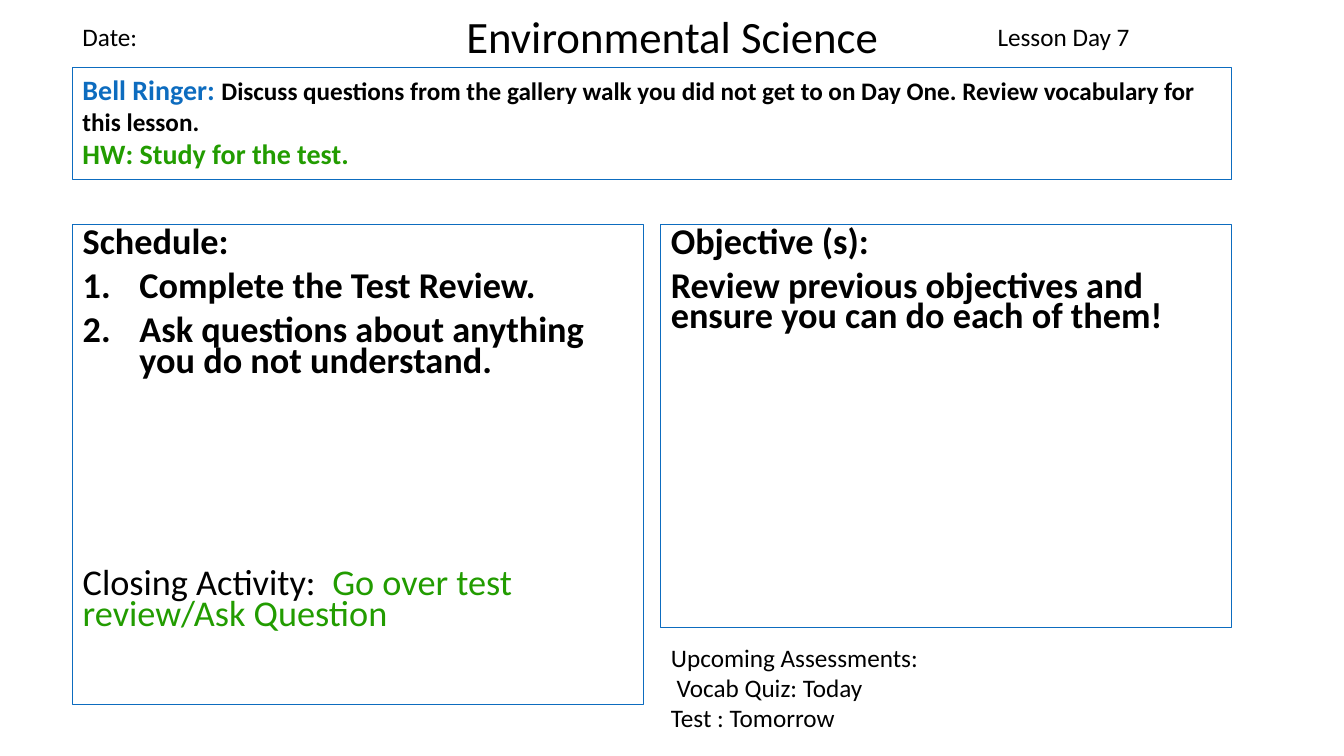
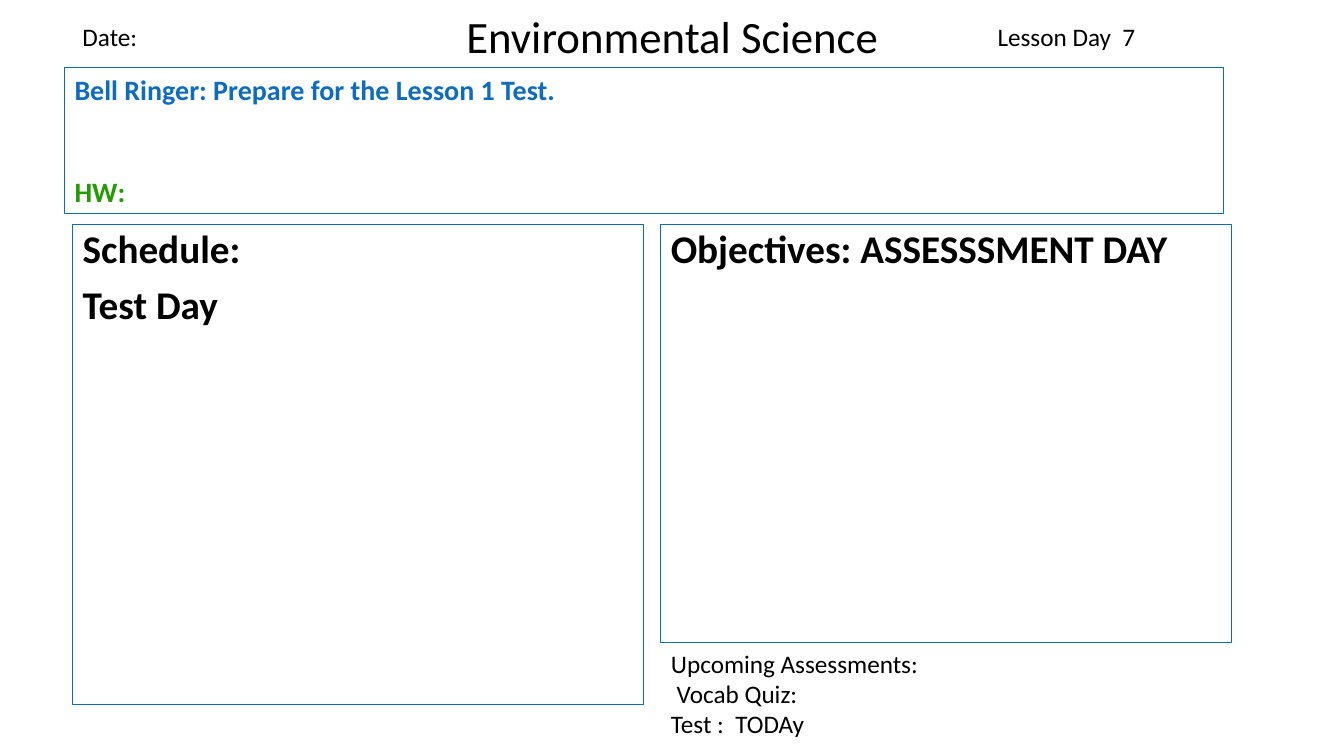
from dataclasses import dataclass, field

from lxml.etree import SubElement
from pptx import Presentation
from pptx.dml.color import RGBColor
from pptx.enum.text import MSO_ANCHOR as Anchor, MSO_AUTO_SIZE as AutoSize, PP_ALIGN as Align
from pptx.oxml.ns import qn
from pptx.util import Cm, Pt


@dataclass(frozen=True)
class Theme:
    font: str = "Calibri"
    ink: RGBColor = RGBColor(0x00, 0x00, 0x00)
    blue: RGBColor = RGBColor(0x0D, 0x6C, 0xBF)
    green: RGBColor = RGBColor(0x22, 0x9C, 0x00)
    title: float = 32
    panel: float = 28
    dense_panel: float = 25.9
    bell: float = 20
    note: float = 18
    border: float = 0.75
    number_indent: float = 1.43
    column_gap: float = 0.43


THEME = Theme()


@dataclass
class Box:
    left: float
    top: float
    width: float
    height: float

    def inner(self, left, top, width, height):
        return Box(self.left + left, self.top + top, width, height)


@dataclass
class Line:
    runs: list
    layout: dict = field(default_factory=dict)
    numbered: bool = False


def words(text, size=THEME.note, color=THEME.ink, bold=False):
    return text, color, {"name": THEME.font, "size": Pt(size), "bold": bold}


def apply(target, values):
    for name, value in values.items():
        setattr(target, name, value)


def place(shape, box):
    apply(shape, {"left": Cm(box.left), "top": Cm(box.top),
                  "width": Cm(box.width), "height": Cm(box.height)})


def outline(shape):
    shape.line.color.rgb = THEME.blue
    shape.line.width = Pt(THEME.border)


def set_bullet(paragraph, numbered):
    properties = paragraph._p.get_or_add_pPr()
    indent = Cm(THEME.number_indent) if numbered else 0
    properties.set("marL", str(indent))
    properties.set("indent", str(-indent))
    if numbered:
        SubElement(properties, qn("a:buFont"), typeface="+mj-lt")
        SubElement(properties, qn("a:buAutoNum"), type="arabicPeriod")
    else:
        SubElement(properties, qn("a:buNone"))


def write(shape, lines, anchor=Anchor.TOP):
    frame = shape.text_frame
    apply(frame, {"word_wrap": True, "auto_size": AutoSize.NONE, "vertical_anchor": anchor})
    for number, line in enumerate(lines):
        paragraph = frame.add_paragraph() if number else frame.paragraphs[0]
        apply(paragraph, line.layout)
        set_bullet(paragraph, line.numbered)
        for text, color, font in line.runs:
            run = paragraph.add_run()
            run.text = text
            apply(run.font, font)
            run.font.color.rgb = color


def add_note(slide, box, lines):
    note = slide.shapes.add_textbox(0, 0, 0, 0)
    place(note, box)
    write(note, lines)
    return note


def add_header(slide, box, lesson_day):
    title = slide.shapes.title
    place(title, box.inner(8.84, 0, 12.55, box.height))
    write(title, [Line([words("Environmental Science", THEME.title)],
                       {"alignment": Align.CENTER})])
    add_note(slide, box.inner(0, 0.33, 8.81, 1.02), [Line([words("Date:")])])
    add_note(slide, box.inner(23.06, 0.33, 5.66, 1.02), [Line([words(lesson_day)])])


def add_bell_ringer(slide, box, lines):
    outline(add_note(slide, box, lines))


def add_columns(slide, box, schedule, objectives, objectives_height):
    width = (box.width - THEME.column_gap) / 2
    columns = (
        (schedule, box.inner(0, 0, width, box.height)),
        (objectives, box.inner(width + THEME.column_gap, 0, width, objectives_height)),
    )
    for index, (lines, column) in enumerate(columns, start=1):
        panel = slide.placeholders[index]
        place(panel, column)
        outline(panel)
        write(panel, lines)


def add_assessments(slide, box, quiz, test):
    add_note(slide, box, [Line([words(text)])
                          for text in ("Upcoming Assessments:", quiz, test)])


def panel_line(text, size, spacing, numbered=False):
    return Line([words(text, size, bold=True)],
                {"line_spacing": spacing, "space_before": Pt(10)}, numbered)


def dense_line(text, numbered=False):
    return panel_line(text, THEME.dense_panel, 0.7, numbered)


def roomy_line(text):
    return panel_line(text, THEME.panel, 0.9)


def bell_words(text, color):
    return words(text, THEME.bell, color, True)


LESSONS = [
    {
        "day": "Lesson Day 7",
        "bell_box": Box(1.83, 1.7, 29.21, 2.82),
        "bell": [
            Line([bell_words("Bell Ringer: ", THEME.blue),
                  words("Discuss questions from the gallery walk you did not get to on "
                        "Day One. Review vocabulary for this lesson.", bold=True)]),
            Line([bell_words("HW: Study for the test.", THEME.green)]),
        ],
        "schedule": [
            dense_line("Schedule:"),
            dense_line("Complete the Test Review.", True),
            dense_line("Ask questions about anything you do not understand.", True),
            Line([words("Closing Activity:  ", THEME.dense_panel),
                  words("Go over test review/Ask Question", THEME.dense_panel, THEME.green)],
                 {"line_spacing": 0.7, "space_before": Pt(137)}),
        ],
        "objectives": [
            dense_line("Objective (s):"),
            dense_line("Review previous objectives and ensure you can do each of them!"),
        ],
        "objectives_height": 10.16,
        "assessments_top": 16.05,
        "quiz": " Vocab Quiz: Today",
        "test": "Test : Tomorrow",
    },
    {
        "day": "Lesson Day  7",
        "bell_box": Box(1.63, 1.7, 29.21, 3.68),
        "bell": [
            Line([bell_words("Bell Ringer: Prepare for the Lesson 1 Test.", THEME.blue)]),
            Line([bell_words("HW:", THEME.green)], {"space_before": Pt(48.8)}),
        ],
        "schedule": [roomy_line("Schedule:"), roomy_line("Test Day")],
        "objectives": [roomy_line("Objectives: ASSESSSMENT DAY")],
        "objectives_height": 10.54,
        "assessments_top": 16.21,
        "quiz": " Vocab Quiz:",
        "test": "Test :  TODAy",
    },
]


def add_lesson(deck, lesson):
    slide = deck.slides.add_slide(deck.slide_layouts.get_by_name("Two Content"))
    add_header(slide, Box(1.83, 0.08, 29.21, 1.63), lesson["day"])
    add_bell_ringer(slide, lesson["bell_box"], lesson["bell"])
    add_columns(slide, Box(1.83, 5.66, 29.21, 12.09), lesson["schedule"],
                lesson["objectives"], lesson["objectives_height"])
    add_assessments(slide, Box(16.66, lesson["assessments_top"], 14.4, 2.57),
                    lesson["quiz"], lesson["test"])


def main():
    deck = Presentation()
    apply(deck, {"slide_width": Cm(33.87), "slide_height": Cm(19.05)})
    for lesson in LESSONS:
        add_lesson(deck, lesson)
    deck.save("out.pptx")


if __name__ == "__main__":
    main()
